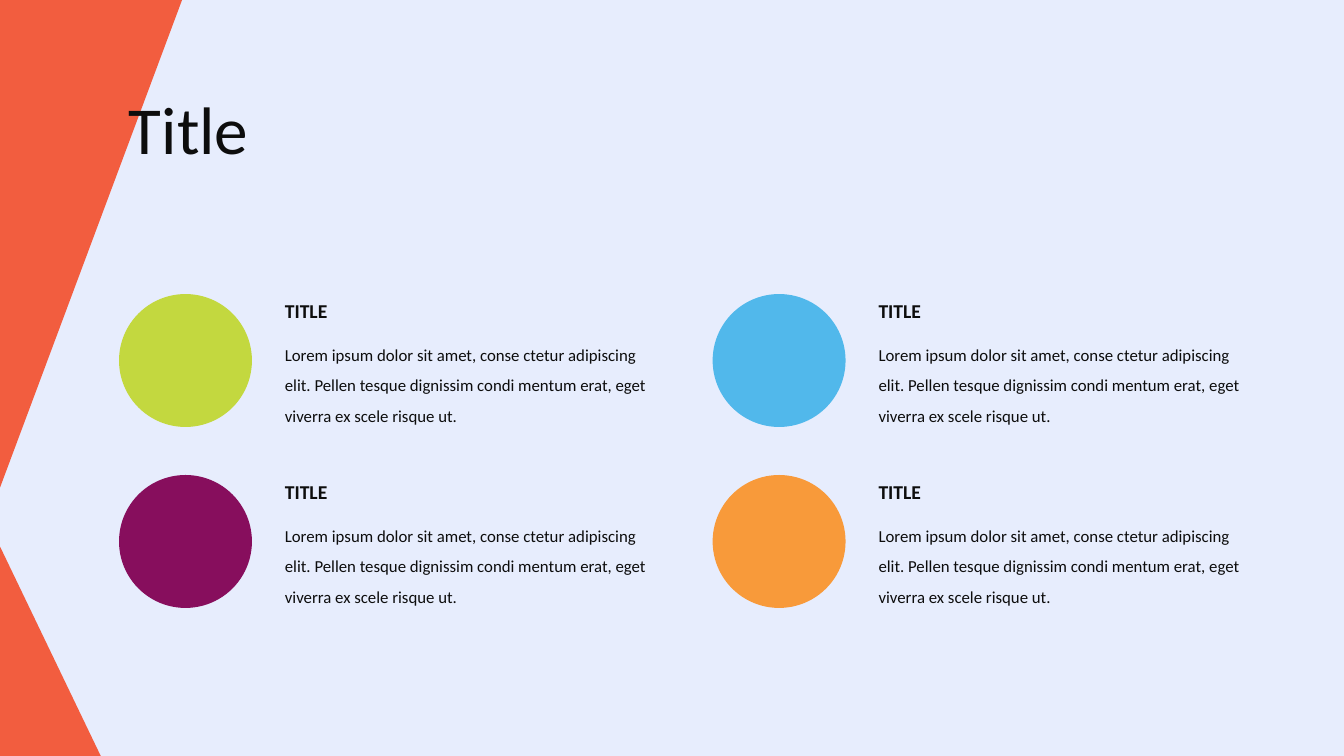
from dataclasses import dataclass

from pptx import Presentation
from pptx.dml.color import RGBColor as RGB
from pptx.enum.shapes import MSO_SHAPE as Form
from pptx.enum.text import MSO_AUTO_SIZE as Fit
from pptx.util import Cm, Pt


@dataclass(frozen=True)
class Theme:
    """Colours, font and type sizes of the slide."""
    back: str = "E7EDFD"
    edge: str = "F25D3F"
    ink: str = "0D0D0D"
    dots: tuple = (("C3D83F", "51B8EB"), ("870E5D", "F89A3A"))
    font: str = "Calibri"
    title: int = 48
    head: int = 14
    body: int = 12


THEME = Theme()
BODY = ("Lorem ipsum dolor sit amet, conse ctetur adipiscing elit. "
        "Pellen tesque dignissim condi mentum erat, eget viverra ex scele risque ut.")


def add_form(slide, form, box, fill):
    """Add a plain filled shape without line or shadow."""
    shape = slide.shapes.add_shape(form, *map(Cm, box))
    shape.shadow.inherit = False
    shape.fill.solid()
    shape.fill.fore_color.rgb = RGB.from_string(fill)
    shape.line.fill.background()
    return shape


def add_text(slide, text, box, size, bold=False, space=1.0):
    """Add a wrapped text box of one paragraph."""
    frame = slide.shapes.add_textbox(*map(Cm, box)).text_frame
    frame.word_wrap = True
    frame.auto_size = Fit.SHAPE_TO_FIT_TEXT
    para = frame.paragraphs[0]
    para.line_spacing = space
    run = para.add_run()
    run.text = text
    style = {"name": THEME.font, "size": Pt(size), "bold": bold}
    for key, value in style.items():
        setattr(run.font, key, value)
    run.font.color.rgb = RGB.from_string(THEME.ink)


def add_edge(slide):
    """Add the two triangles on the left edge."""
    add_form(slide, Form.RIGHT_TRIANGLE, (0, 13.77, 2.54, 5.28), THEME.edge)
    top = add_form(slide, Form.RIGHT_TRIANGLE, (0, -0.03, 4.6, 12.32), THEME.edge)
    top.rotation = 180
    top._element.spPr.xfrm.set("flipH", "1")


def add_item(slide, left, top, fill):
    """Add a disc with its heading and text."""
    add_form(slide, Form.OVAL, (left, top, 3.35, 3.35), fill)
    side = left + 3.93
    add_text(slide, "TITLE", (side, top, 3.7, 0.86), THEME.head, bold=True)
    add_text(slide, BODY, (side, top + 0.9, 10, 2.57), THEME.body, space=1.5)


def main():
    """Build the slide and save it."""
    deck = Presentation()
    deck.slide_width, deck.slide_height = Cm(33.87), Cm(19.05)
    slide = deck.slides.add_slide(deck.slide_layouts[6])
    fill = slide.background.fill
    fill.solid()
    fill.fore_color.rgb = RGB.from_string(THEME.back)
    add_edge(slide)
    add_text(slide, "Title", (3, 2.08, 8.36, 2.31), THEME.title)
    for row, dots in enumerate(THEME.dots):
        for col, dot in enumerate(dots):
            add_item(slide, 3 + 14.96 * col, 7.41 + 4.56 * row, dot)
    deck.save("out.pptx")


if __name__ == "__main__":
    main()
